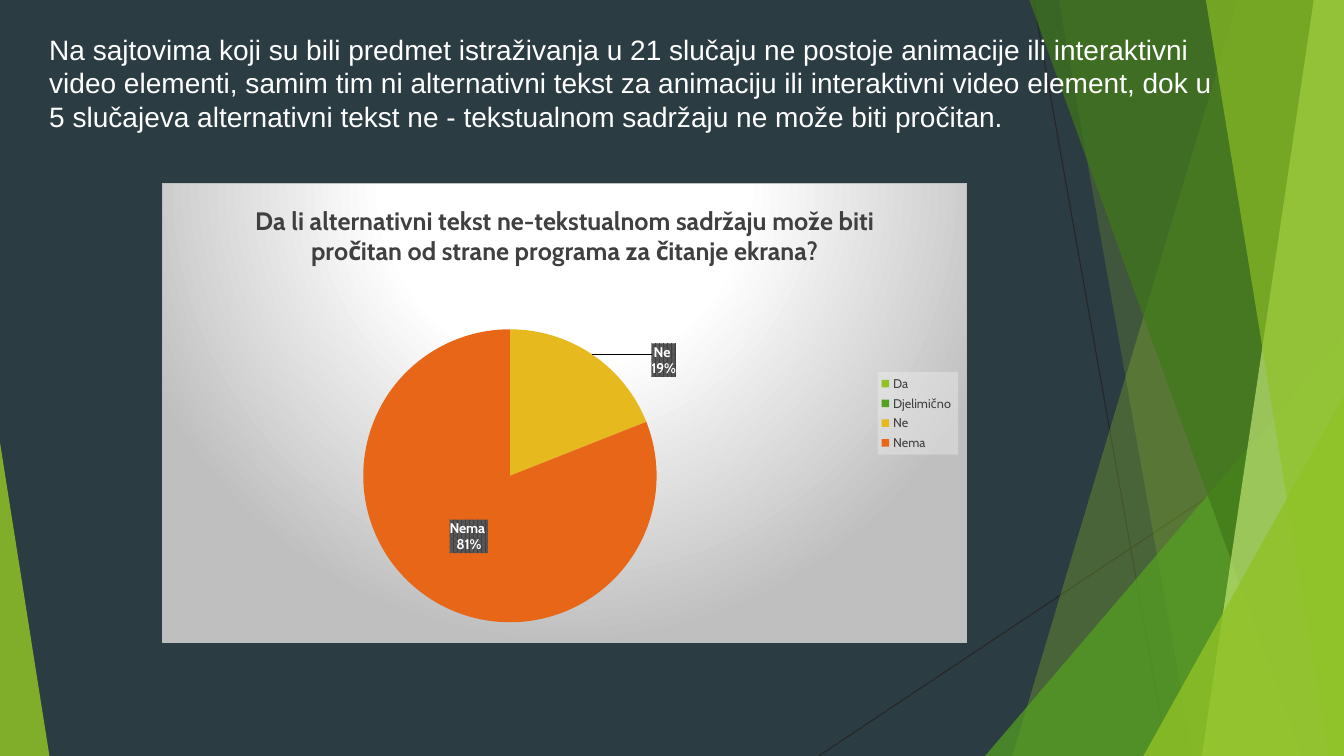
from copy import deepcopy

from pptx import Presentation
from pptx.chart.data import CategoryChartData
from pptx.dml.color import RGBColor
from pptx.enum.chart import XL_CHART_TYPE, XL_LABEL_POSITION as LABEL_POS, XL_LEGEND_POSITION as LEGEND_POS
from pptx.enum.shapes import MSO_CONNECTOR, MSO_SHAPE
from pptx.oxml import parse_xml
from pptx.oxml.ns import nsdecls, qn
from pptx.util import Inches, Pt

# Content
INTRO = ("Na sajtovima koji su bili predmet istraživanja u 21 slučaju ne postoje animacije ili "
         "interaktivni video elementi, samim tim ni alternativni tekst za animaciju ili interaktivni "
         "video element, dok u 5 slučajeva alternativni tekst ne - tekstualnom sadržaju ne može biti "
         "pročitan.")
QUESTION = ("Da li alternativni tekst ne-tekstualnom sadržaju može biti pročitan od strane programa "
            "za čitanje ekrana?")
ANSWERS = [("Da ", 0, "lime"), ("Djelimično ", 0, "green"), ("Ne ", 19, "yellow"), ("Nema ", 81, "orange")]

COLORS = {"bg": "2C3C43", "white": "FFFFFF", "dark": "404040", "label": "595959", "silver": "BFBFBF",
          "pale": "F2F2F2", "line": "262626", "lime": "90C226", "green": "54A021", "forest": "3F7819",
          "light": "C0E474", "yellow": "E6B91E", "orange": "E76618"}
W, H = 13.33, 7.5

# Decoration, back to front
LINES = [((10.25, 0), (11.58, H)), ((W, 4.03), (8.12, H))]
# band: top-left x, bottom-left x; triangle: left, top, width, apex (0 left, 1 right)
FACETS = [("band", (12.28, 10.04), "lime", 30),
          ("band", (10.5, 11.83), "lime", 20),
          ("triangle", (9.77, 3.33, 3.56, 1), "green", 72),
          ("band", (10.21, 12.91), "forest", 70),
          ("band", (13.03, 11.92), "light", 70),
          ("band", (11.96, 13.18), "lime", 65),
          ("triangle", (11.34, 3.93, 1.99, 1), "lime", 80),
          ("triangle", (0, 4.39, 0.49, 0), "lime", 85)]


def rgb(name):
    return RGBColor.from_string(COLORS[name])


def style_font(font, size, color, name, bold=False):
    font.size, font.name, font.bold = Pt(size), name, bold
    font.color.rgb = rgb(color)


def chart_xml(tag, inner):
    return parse_xml(f'<c:{tag} {nsdecls("c", "a")}>{inner}</c:{tag}>')


def color_xml(name, inner=""):
    return f'<a:srgbClr val="{COLORS[name]}">{inner}</a:srgbClr>'


def layout_xml(**parts):
    inner = "".join(f'<c:{tag} val="{val}"/>' for tag, val in parts.items())
    return chart_xml("layout", f"<c:manualLayout>{inner}</c:manualLayout>")


def add_facet(shapes, kind, dims, color, alpha):
    if kind == "band":
        top_x, bottom_x = dims
        corners = [(Inches(x), Inches(y)) for x, y in ((top_x, 0), (W, 0), (W, H), (bottom_x, H))]
        builder = shapes.build_freeform(*corners[0])
        builder.add_line_segments(corners[1:], close=True)
        s = builder.convert_to_shape()
    else:
        left, top, width, apex = dims
        s = shapes.add_shape(MSO_SHAPE.ISOSCELES_TRIANGLE, Inches(left), Inches(top),
                             Inches(width), Inches(H - top))
        s.adjustments[0] = apex
    s.shadow.inherit = False
    s.line.fill.background()
    s.fill.solid()
    s.fill.fore_color.rgb = rgb(color)
    clr = s._element.spPr.find(".//" + qn("a:srgbClr"))
    clr.append(parse_xml(f'<a:alpha {nsdecls("a")} val="{alpha * 1000}"/>'))


def add_intro(shapes):
    tf = shapes.add_textbox(Inches(0.39), Inches(0.27), Inches(11.84), Inches(1.72)).text_frame
    tf.word_wrap = True
    p = tf.paragraphs[0]
    p.text = INTRO
    style_font(p.font, 20, "white", "Arial")


def format_labels(series):
    labels = series.data_labels
    labels.number_format, labels.number_format_is_linked = "0%", False
    labels.show_value = False
    labels.show_category_name = labels.show_percentage = True
    labels.position = LABEL_POS.CENTER
    style_font(labels.font, 10, "white", "Cabin", True)
    el = labels._element
    el.find(qn("c:txPr")).addprevious(chart_xml(
        "spPr", f'<a:pattFill prst="pct75"><a:fgClr>{color_xml("dark")}</a:fgClr>'
                f'<a:bgClr>{color_xml("label")}</a:bgClr></a:pattFill><a:ln><a:noFill/></a:ln>'))
    el.find(qn("c:showBubbleSize")).addnext(chart_xml("separator", "\n"))

    # Empty slices carry no label; the "Ne" label is pulled out of the pie
    pulled = chart_xml("dLbl", '<c:idx val="2"/>')
    pulled.append(layout_xml(x=0.14, y=-0.12))
    pulled.extend(deepcopy(child) for child in el if child.tag != qn("c:showLeaderLines"))
    hidden = [chart_xml("dLbl", f'<c:idx val="{i}"/><c:delete val="1"/>')
              for i, (_, value, _) in enumerate(ANSWERS) if value == 0]
    for i, label in enumerate(hidden + [pulled]):
        el.insert(i, label)


def add_pie(shapes):
    data = CategoryChartData()
    data.categories = [name for name, _, _ in ANSWERS]
    data.add_series(QUESTION, [value for _, value, _ in ANSWERS])
    chart = shapes.add_chart(XL_CHART_TYPE.PIE, Inches(1.61), Inches(1.82), Inches(7.98),
                             Inches(4.56), data).chart
    style_font(chart.font, 10, "white", "Cabin")

    # Title and legend
    chart.has_title = True
    p = chart.chart_title.text_frame.paragraphs[0]
    p.text = QUESTION
    style_font(p.font, 18, "dark", "Cabin", True)
    chart.has_legend = True
    legend = chart.legend
    legend.position, legend.include_in_layout = LEGEND_POS.RIGHT, False
    style_font(legend.font, 9, "dark", "Cabin")
    pale = color_xml("pale", '<a:alpha val="39000"/>')
    legend._element.find(qn("c:txPr")).addprevious(
        chart_xml("spPr", f"<a:solidFill>{pale}</a:solidFill>"))

    # Slices and labels
    plot = chart.plots[0]
    plot.vary_by_categories = True
    series = plot.series[0]
    for i, (_, _, color) in enumerate(ANSWERS):
        fill = series.points[i].format.fill
        fill.solid()
        fill.fore_color.rgb = rgb(color)
    format_labels(series)

    # Plot position
    area = chart._chartSpace.find(".//" + qn("c:plotArea"))
    for old in area.findall(qn("c:layout")):
        area.remove(old)
    area.insert(0, layout_xml(layoutTarget="inner", xMode="edge", yMode="edge",
                              x=0.014, y=0.317, w=0.836, h=0.639))

    # Radial background and border
    stops = "".join(f'<a:gs pos="{pos * 1000}">{color_xml(color)}</a:gs>'
                    for pos, color in ((0, "white"), (39, "white"), (100, "silver")))
    chart._chartSpace.find(qn("c:txPr")).addprevious(chart_xml(
        "spPr", f'<a:gradFill><a:gsLst>{stops}</a:gsLst><a:path path="circle">'
                '<a:fillToRect l="50000" t="-80000" r="50000" b="180000"/></a:path></a:gradFill>'
                f'<a:ln w="9525"><a:solidFill>{color_xml("silver")}</a:solidFill></a:ln>'))


def main():
    prs = Presentation()
    prs.slide_width, prs.slide_height = Inches(W), Inches(H)
    slide = prs.slides.add_slide(prs.slide_layouts[6])
    slide.background.fill.solid()
    slide.background.fill.fore_color.rgb = rgb("bg")
    shapes = slide.shapes
    for start, end in LINES:
        line = shapes.add_connector(MSO_CONNECTOR.STRAIGHT, *(Inches(v) for v in start + end))
        line.line.color.rgb = rgb("line")
        line.line.width = Pt(0.75)
        line._element.spPr.append(parse_xml(f'<a:effectLst {nsdecls("a")}/>'))
    for facet in FACETS:
        add_facet(shapes, *facet)
    add_intro(shapes)
    add_pie(shapes)
    prs.save("out.pptx")


if __name__ == "__main__":
    main()
